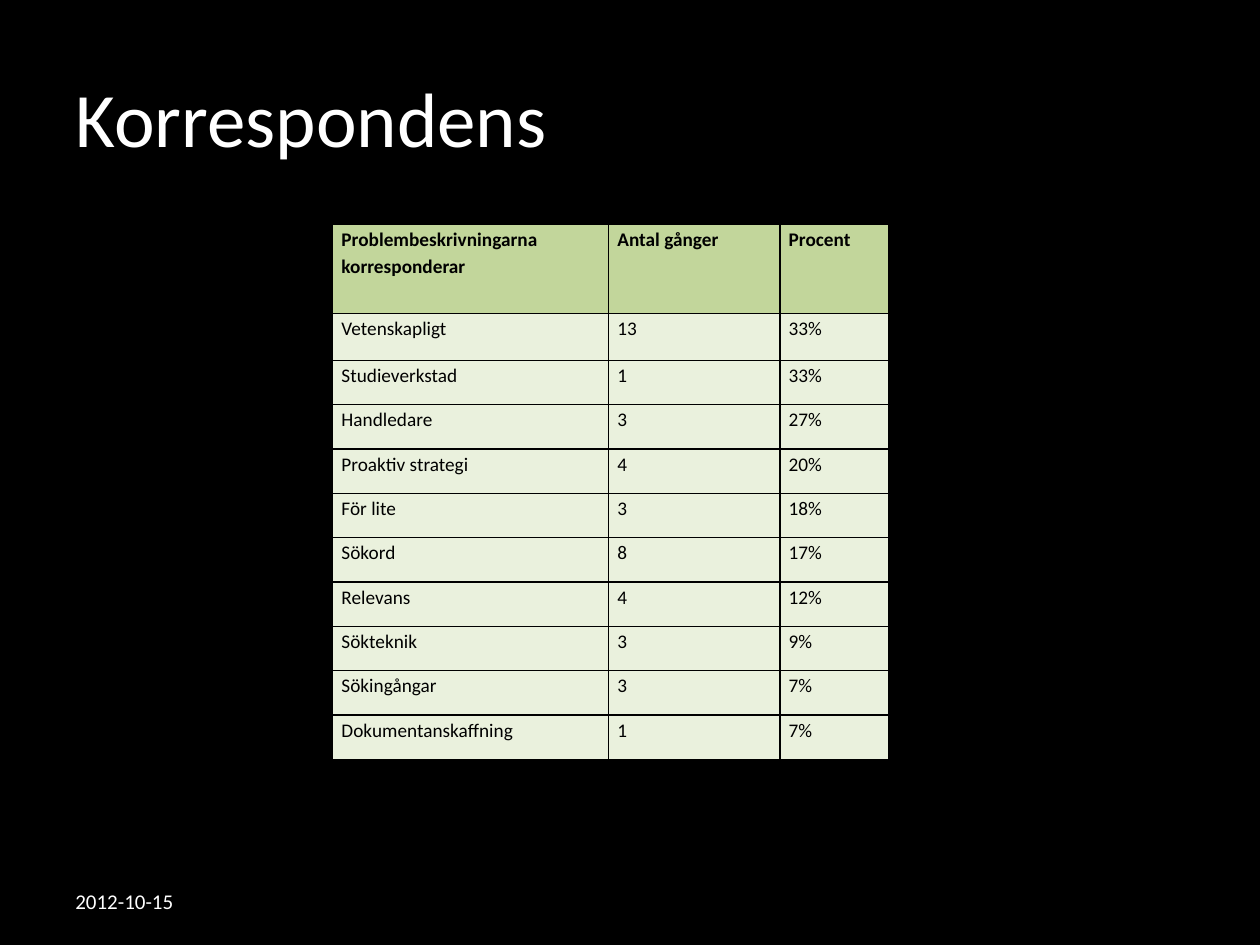
"""Build the slide "Korrespondens" with its table of problem descriptions."""
from lxml import etree
from pptx import Presentation
from pptx.dml.color import RGBColor
from pptx.enum.text import MSO_ANCHOR, PP_ALIGN
from pptx.oxml.ns import qn
from pptx.util import Inches, Pt

MIDDLE, TOP = MSO_ANCHOR.MIDDLE, MSO_ANCHOR.TOP
LEFT = PP_ALIGN.LEFT
BLACK = RGBColor(0x00, 0x00, 0x00)
WHITE = RGBColor(0xFF, 0xFF, 0xFF)
HEADER_GREEN = RGBColor(0xC2, 0xD6, 0x9B)
PALE_GREEN = RGBColor(0xEA, 0xF1, 0xDD)

MARGIN = 0.5
TABLE_HEIGHT = 4.25
COLUMN_WIDTHS = [2.19, 1.36, 0.86]
HEADER_HEIGHT, FIRST_HEIGHT = 0.71, 0.37
ROWS = [
    ("Problembeskrivningarna korresponderar", "Antal gånger", "Procent"),
    ("Vetenskapligt", "13", "33%"),
    ("Studieverkstad", "1", "33%"),
    ("Handledare", "3", "27%"),
    ("Proaktiv strategi", "4", "20%"),
    ("För lite", "3", "18%"),
    ("Sökord", "8", "17%"),
    ("Relevans", "4", "12%"),
    ("Sökteknik", "3", "9%"),
    ("Sökingångar", "3", "7%"),
    ("Dokumentanskaffning", "1", "7%"),
]
CELL_FORMAT = {
    "margin_left": Inches(0.07),
    "margin_right": Inches(0.07),
    "margin_top": 0,
    "margin_bottom": 0,
    "vertical_anchor": TOP,
}


def write(frame, text, size, color, bold=False):
    para = frame.paragraphs[0]
    para.alignment = LEFT
    span = para.add_run()
    span.text = text
    values = {"name": "Calibri", "size": Pt(size), "bold": bold}
    for name, value in values.items():
        setattr(span.font, name, value)
    span.font.color.rgb = color
    return para


def add_borders(cell, color):
    properties = cell._tc.get_or_add_tcPr()
    for side in ("a:lnL", "a:lnR", "a:lnT", "a:lnB"):
        line = etree.SubElement(properties, qn(side), w=str(Pt(1)))
        fill = etree.SubElement(line, qn("a:solidFill"))
        etree.SubElement(fill, qn("a:srgbClr"), val=str(color))


deck = Presentation()
deck.slide_width, deck.slide_height = Inches(10), Inches(7.5)
page = deck.slides.add_slide(deck.slide_layouts[5])
page.background.fill.solid()
page.background.fill.fore_color.rgb = BLACK

title = page.shapes.title
title_place = {"left": MARGIN, "top": 0.3, "width": 10 - 2 * MARGIN, "height": 1.25}
for name, value in title_place.items():
    setattr(title, name, Inches(value))
title.text_frame.vertical_anchor = MIDDLE
write(title.text_frame, "Korrespondens", 44, WHITE)

table = page.shapes.add_table(
    len(ROWS), len(COLUMN_WIDTHS), Inches(2.64), Inches(1.78),
    Inches(sum(COLUMN_WIDTHS)), Inches(TABLE_HEIGHT),
).table
table.horz_banding = False
for column, width in zip(table.columns, COLUMN_WIDTHS):
    column.width = Inches(width)

other_count = len(ROWS) - 2
other_height = (TABLE_HEIGHT - HEADER_HEIGHT - FIRST_HEIGHT) / other_count
row_heights = [HEADER_HEIGHT, FIRST_HEIGHT] + [other_height] * other_count
for index, (row, texts) in enumerate(zip(table.rows, ROWS)):
    row.height = Inches(row_heights[index])
    is_header = index == 0
    for cell, text in zip(row.cells, texts):
        for name, value in CELL_FORMAT.items():
            setattr(cell, name, value)
        add_borders(cell, BLACK)
        cell.fill.solid()
        cell.fill.fore_color.rgb = HEADER_GREEN if is_header else PALE_GREEN
        write(cell.text_frame, text, 11, BLACK, is_header).line_spacing = 1.15

date_box = page.shapes.add_textbox(
    Inches(MARGIN), Inches(6.95), Inches(2.33), Inches(0.4)
)
date_box.text_frame.word_wrap = True
date_box.text_frame.vertical_anchor = MIDDLE
write(date_box.text_frame, "2012-10-15", 12, WHITE)

deck.save("out.pptx")
